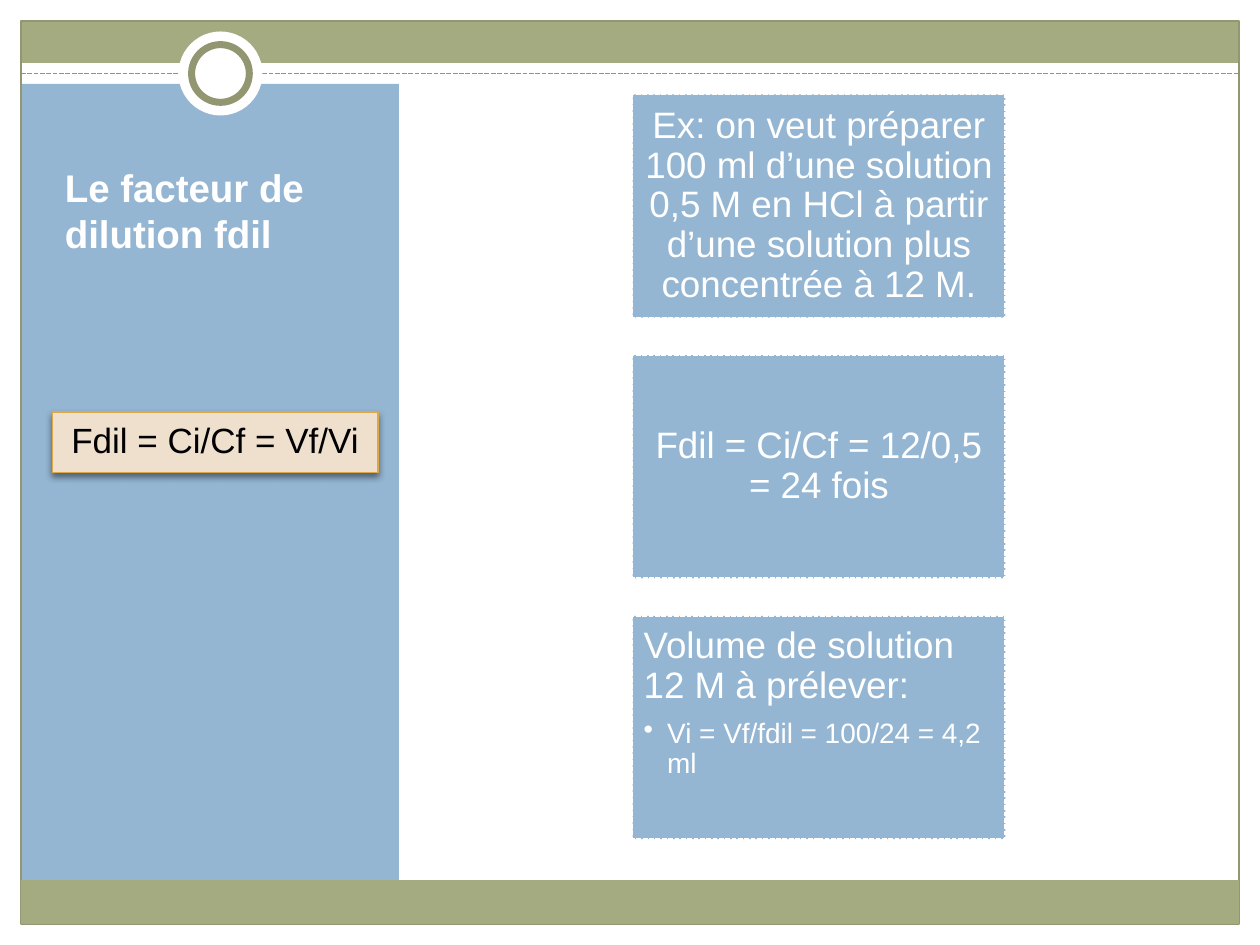
from lxml import etree
from pptx import Presentation
from pptx.dml.color import RGBColor
from pptx.enum.dml import MSO_LINE
from pptx.enum.shapes import MSO_CONNECTOR, MSO_SHAPE
from pptx.enum.text import MSO_ANCHOR, PP_ALIGN
from pptx.oxml import parse_xml
from pptx.oxml.ns import nsdecls, qn
from pptx.util import Pt

RECTANGLE, OVAL = MSO_SHAPE.RECTANGLE, MSO_SHAPE.OVAL
STRAIGHT = MSO_CONNECTOR.STRAIGHT
DASH = MSO_LINE.SQUARE_DOT
TOP, MIDDLE, BOTTOM = MSO_ANCHOR.TOP, MSO_ANCHOR.MIDDLE, MSO_ANCHOR.BOTTOM
LEFT, CENTER = PP_ALIGN.LEFT, PP_ALIGN.CENTER

WHITE, BLACK = "FFFFFF", "000000"
GREEN, DARK_GREEN, BLUE = "A5AB81", "929772", "94B6D2"
CREAM, ORANGE = "EFE0CE", "DDA84A"
FONT = "Arial"


def color(hex_string):
    return RGBColor.from_string(hex_string)


def style_line(line, line_color, width, dash=None):
    line.color.rgb = color(line_color)
    line.width = Pt(width)
    if dash is not None:
        line.dash_style = dash


def add_shape(slide, kind, box, fill=None, line=None):
    """box is left, top, width, height; line is color, width and optional dash."""
    shape = slide.shapes.add_shape(kind, *map(Pt, box))
    shape.shadow.inherit = False
    if fill:
        shape.fill.solid()
        shape.fill.fore_color.rgb = color(fill)
    else:
        shape.fill.background()
    if line:
        style_line(shape.line, *line)
    else:
        shape.line.fill.background()
    return shape


def add_dashed_rule(slide, left, right, y):
    rule = slide.shapes.add_connector(STRAIGHT, Pt(left), Pt(y), Pt(right), Pt(y))
    style_line(rule.line, DARK_GREEN, 0.9, DASH)
    etree.SubElement(rule._element.spPr, qn("a:effectLst"))


def set_frame(text_frame, anchor, inset_x, inset_y):
    text_frame.word_wrap = True
    text_frame.vertical_anchor = anchor
    text_frame.margin_left = text_frame.margin_right = Pt(inset_x)
    text_frame.margin_top = text_frame.margin_bottom = Pt(inset_y)


def write(paragraph, text, size, text_color=WHITE, align=LEFT, bold=False):
    paragraph.text = text
    paragraph.alignment = align
    font = paragraph.runs[0].font
    font.name, font.size, font.bold = FONT, Pt(size), bold
    font.color.rgb = color(text_color)


def add_bullet(paragraph, indent):
    properties = paragraph._p.get_or_add_pPr()
    properties.set("marL", str(Pt(indent)))
    properties.set("indent", str(-Pt(indent)))
    etree.SubElement(properties, qn("a:buChar")).set("char", "•")


def add_soft_shadow(shape):
    effects = shape._element.spPr.find(qn("a:effectLst"))
    effects.append(parse_xml(
        f'<a:outerShdw {nsdecls("a")} blurRad="50800" dist="25400" dir="5400000" '
        'rotWithShape="0"><a:srgbClr val="000000"><a:alpha val="45000"/>'
        '</a:srgbClr></a:outerShdw>'))


def add_background(slide):
    add_shape(slide, RECTANGLE, (12, 12, 696, 24), GREEN)
    margins = [(0, 528, 720, 12), (708, 0, 12, 540), (0, 0, 720, 9.5), (0, 0, 12, 540)]
    for margin in margins:
        add_shape(slide, RECTANGLE, margin, WHITE)
    add_shape(slide, RECTANGLE, (12, 48, 216, 462), BLUE)
    add_shape(slide, RECTANGLE, (12, 12, 696, 516), line=(DARK_GREEN, 0.75))
    add_dashed_rule(slide, 12, 708, 42)
    add_shape(slide, OVAL, (102, 18, 48, 48), WHITE)
    add_shape(slide, OVAL, (109.5, 25.5, 33, 33), WHITE, (DARK_GREEN, 4))
    add_shape(slide, RECTANGLE, (12, 503, 696, 25), GREEN)


def add_title(slide, text):
    title = slide.shapes.add_textbox(Pt(30), Pt(72), Pt(186), Pt(78))
    set_frame(title.text_frame, BOTTOM, 7.2, 3.6)
    write(title.text_frame.paragraphs[0], text, 22, bold=True)


def add_formula(slide, text):
    formula = add_shape(slide, RECTANGLE, (30, 235.5, 186, 34.5), CREAM, (ORANGE, 0.75))
    add_soft_shadow(formula)
    set_frame(formula.text_frame, TOP, 7.2, 3.6)
    paragraph = formula.text_frame.paragraphs[0]
    write(paragraph, text, 20, BLACK, CENTER)
    paragraph.space_before = Pt(2)


def add_card(slide, top, text, detail):
    """A step of the example; a detail becomes a bullet under left-aligned text."""
    card = add_shape(slide, RECTANGLE, (361.5, top, 213, 127.5), BLUE, (WHITE, 0.9, DASH))
    text_frame = card.text_frame
    set_frame(text_frame, TOP if detail else MIDDLE, 6.3, 6.3)
    paragraph = text_frame.paragraphs[0]
    write(paragraph, text, 21, align=LEFT if detail else CENTER)
    paragraph.line_spacing = 0.9
    if detail:
        paragraph.space_after = Pt(7.35)
        bullet = text_frame.add_paragraph()
        write(bullet, detail, 16)
        bullet.level = 1
        bullet.line_spacing = 0.9
        add_bullet(bullet, 13.5)


def main():
    presentation = Presentation()
    presentation.slide_width, presentation.slide_height = Pt(720), Pt(540)
    slide = presentation.slides.add_slide(presentation.slide_layouts[6])
    add_background(slide)
    add_title(slide, "Le facteur de dilution fdil")
    add_formula(slide, "Fdil = Ci/Cf = Vf/Vi")
    steps = [
        ("Ex: on veut préparer 100 ml d’une solution 0,5 M en HCl à partir "
         "d’une solution plus concentrée à 12 M.", None),
        ("Fdil = Ci/Cf = 12/0,5 = 24 fois", None),
        ("Volume de solution 12 M à prélever:", "Vi = Vf/fdil = 100/24 = 4,2 ml"),
    ]
    for index, (text, detail) in enumerate(steps):
        add_card(slide, 54 + 149 * index, text, detail)
    presentation.save("out.pptx")


if __name__ == "__main__":
    main()
